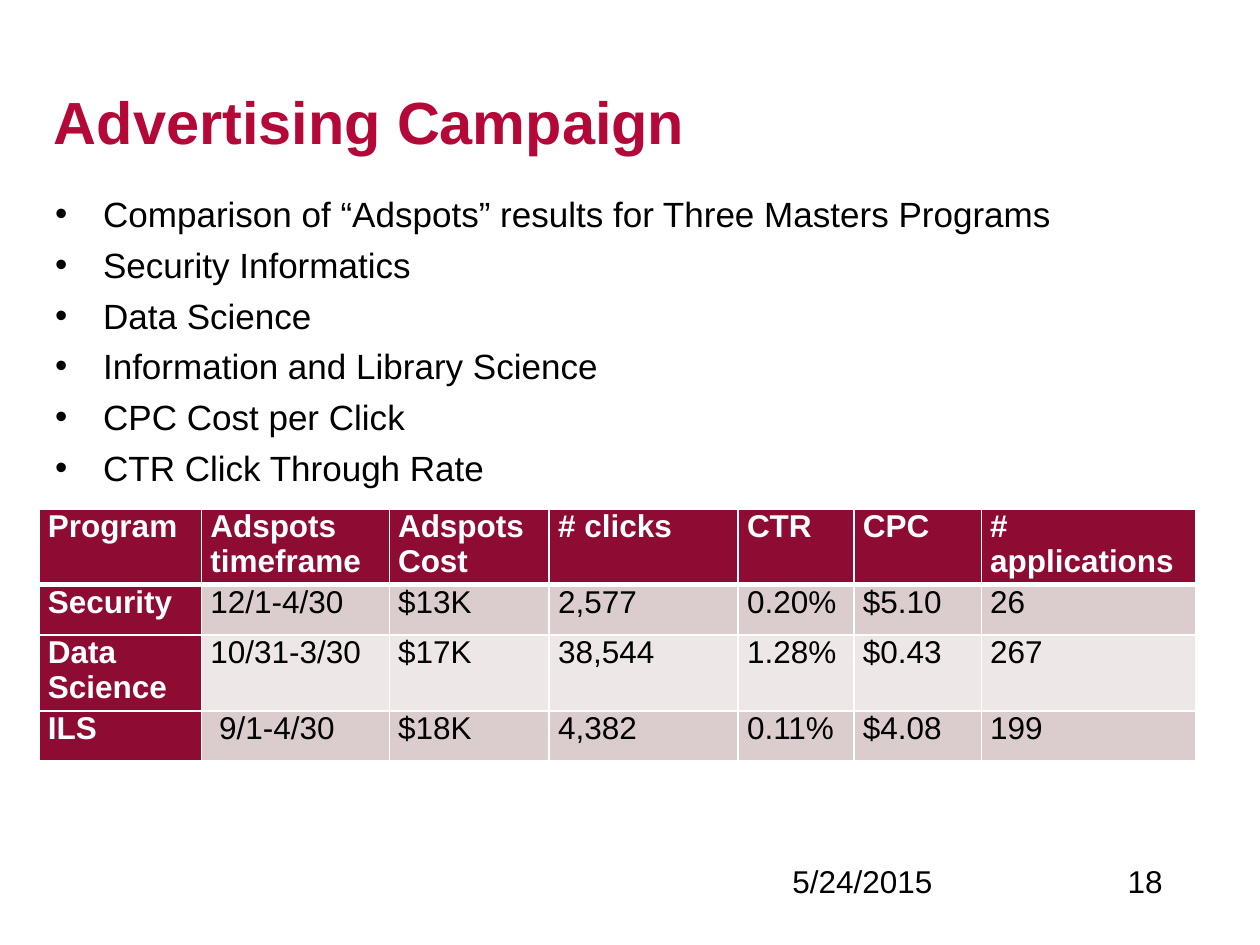
from lxml import etree
from pptx import Presentation
from pptx.dml.color import RGBColor
from pptx.enum.text import MSO_ANCHOR
from pptx.oxml.ns import qn
from pptx.util import Inches, Pt

TOP, MIDDLE = MSO_ANCHOR.TOP, MSO_ANCHOR.MIDDLE
FONT = "Arial"
COLORS = {
    "title": "B30838",
    "text": "000000",
    "white": "FFFFFF",
    "header": "8E0C33",
    "band_dark": "DBCCCE",
    "band_light": "EEE7E8",
}

BULLETS = [
    "Comparison of “Adspots” results for Three Masters Programs",
    "Security Informatics",
    "Data Science",
    "Information and Library Science",
    "CPC Cost per Click",
    "CTR Click Through Rate",
]
CAMPAIGNS = [
    ["Program", "Adspots timeframe", "Adspots Cost", "# clicks", "CTR", "CPC",
     "# applications"],
    ["Security", "12/1-4/30", "$13K", "2,577", "0.20%", "$5.10", "26"],
    ["Data Science", "10/31-3/30", "$17K", "38,544", "1.28%", "$0.43", "267"],
    ["ILS", " 9/1-4/30", "$18K", "4,382", "0.11%", "$4.08", "199"],
]
COL_WIDTHS = [1.29, 1.49, 1.27, 1.5, 0.92, 1.01, 1.7]
ROW_HEIGHTS = [0.56, 0.4, 0.56, 0.4]


def write(p, text, size=18, color="text", bold=False):
    """Add formatted text to a paragraph."""
    r = p.add_run()
    r.text = text
    r.font.name = FONT
    r.font.size = Pt(size)
    r.font.bold = bold
    r.font.color.rgb = RGBColor.from_string(COLORS[color])


def add_bullet(p, indent):
    """Give a paragraph a round bullet and a hanging indent."""
    pPr = p._p.get_or_add_pPr()
    pPr.set("marL", str(Inches(indent)))
    pPr.set("indent", str(-Inches(indent)))
    etree.SubElement(pPr, qn("a:buFont")).set("typeface", FONT)
    etree.SubElement(pPr, qn("a:buChar")).set("char", "•")


def set_borders(cell, widths):
    """Draw white cell edges; widths maps an edge tag to points."""
    tcPr = cell._tc.get_or_add_tcPr()
    for i, (edge, width) in enumerate(widths.items()):
        ln = etree.Element(qn(f"a:{edge}"), w=str(Pt(width)))
        fill = etree.SubElement(ln, qn("a:solidFill"))
        etree.SubElement(fill, qn("a:srgbClr")).set("val", COLORS["white"])
        tcPr.insert(i, ln)


class SlideBuilder:
    """Holds the current slide and adds elements in the deck style."""

    def __init__(self, slide):
        self.s = slide

    def text(self, box, lines, bullet=False, anchor=TOP, **style):
        sp = self.s.shapes.add_textbox(*map(Inches, box))
        tf = sp.text_frame
        tf.word_wrap = True
        tf.vertical_anchor = anchor
        for i, line in enumerate(lines):
            p = tf.add_paragraph() if i else tf.paragraphs[0]
            if bullet:
                add_bullet(p, 0.38)
            if i:
                p.space_before = Pt(5)
            write(p, line, **style)

    def table(self, left, top, rows, widths, heights):
        box = map(Inches, (left, top, sum(widths), sum(heights)))
        table = self.s.shapes.add_table(len(rows), len(widths), *box).table
        table.first_col = True
        for col, width in zip(table.columns, widths):
            col.width = Inches(width)
        for row, height in zip(table.rows, heights):
            row.height = Inches(height)
        for i, values in enumerate(rows):
            for j, value in enumerate(values):
                self.cell(table.cell(i, j), value, i, j)

    def cell(self, cell, value, i, j):
        heading = i == 0 or j == 0
        band = "band_dark" if i % 2 else "band_light"
        cell.margin_left = cell.margin_right = Inches(0.07)
        cell.margin_top = cell.margin_bottom = 0
        cell.fill.solid()
        cell.fill.fore_color.rgb = RGBColor.from_string(
            COLORS["header" if heading else band])
        # A thick rule separates the header row from the data
        set_borders(cell, {"lnL": 1, "lnR": 1, "lnT": 3 if i == 1 else 1,
                           "lnB": 3 if i == 0 else 1})
        write(cell.text_frame.paragraphs[0], value,
              color="white" if heading else "text", bold=heading)


def main():
    prs = Presentation()
    prs.slide_width, prs.slide_height = Inches(10), Inches(7.5)
    s = SlideBuilder(prs.slides.add_slide(prs.slide_layouts[6]))

    # Title and bullets
    s.text((0.33, 0.33, 9.17, 1.25), ["Advertising Campaign"], anchor=MIDDLE,
           size=34, color="title", bold=True)
    s.text((0.34, 1.48, 9.16, 0.6), BULLETS, bullet=True, size=20)

    # Campaign results
    s.table(0.31, 4.04, CAMPAIGNS, COL_WIDTHS, ROW_HEIGHTS)

    # Date and slide number
    s.text((6.19, 6.79, 2.25, 0.4), ["5/24/2015"])
    s.text((8.85, 6.79, 1.05, 0.4), ["18"])

    prs.save("out.pptx")


if __name__ == "__main__":
    main()
